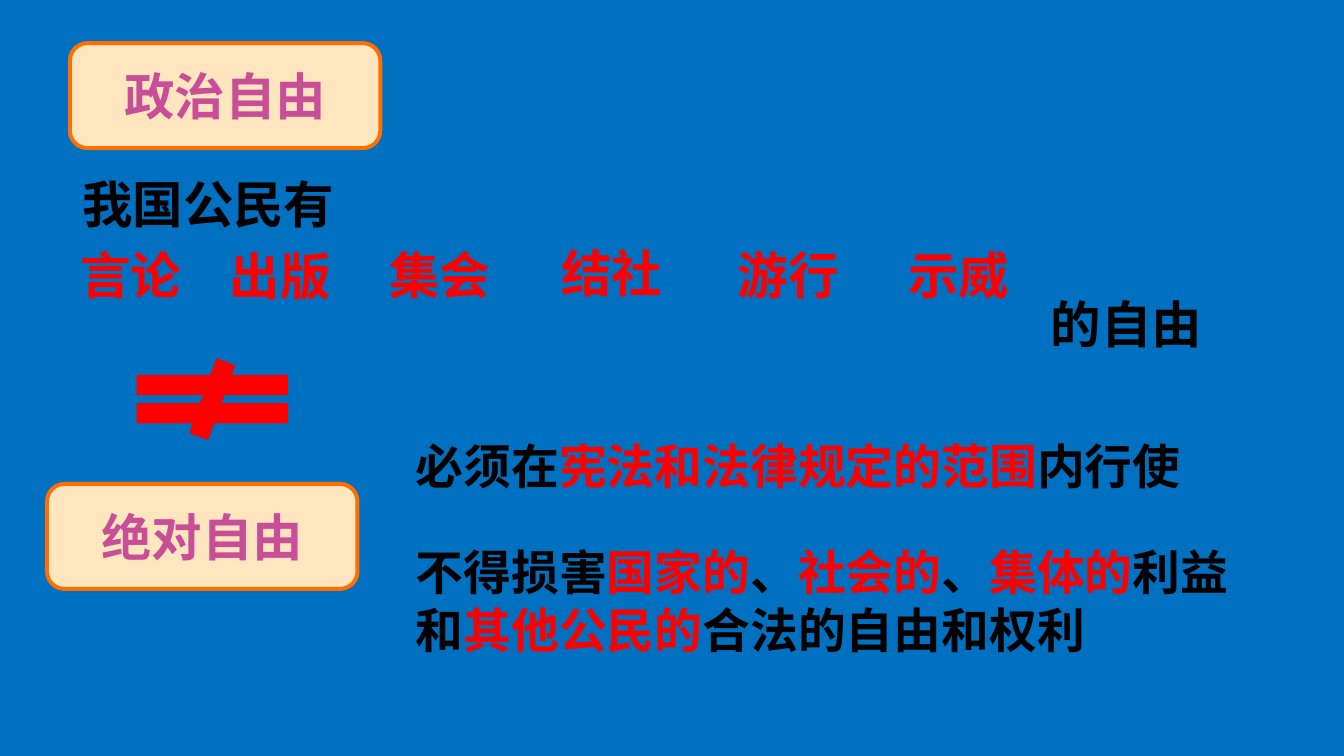
"""Build the slide that sets political freedom against absolute freedom."""
from dataclasses import dataclass

from lxml.etree import SubElement
from pptx import Presentation
from pptx.dml.color import RGBColor as Rgb
from pptx.enum.shapes import MSO_SHAPE as Shape
from pptx.enum.text import MSO_ANCHOR as Anchor, MSO_AUTO_SIZE as Auto, PP_ALIGN as Align
from pptx.oxml.ns import qn
from pptx.util import Inches, Pt

WIDE, HIGH = Inches(14.06), Inches(7.91)


@dataclass(frozen=True)
class Theme:
    face: str = "Noto Sans CJK SC"
    back: Rgb = Rgb(0x00, 0x70, 0xC0)
    card: Rgb = Rgb(0xFF, 0xE6, 0xBF)
    edge: Rgb = Rgb(0xFF, 0x6E, 0x00)
    head: Rgb = Rgb(0xC8, 0x4E, 0x97)
    ink: Rgb = Rgb(0x00, 0x00, 0x00)
    red: Rgb = Rgb(0xFF, 0x00, 0x00)
    large: Pt = Pt(38)
    small: Pt = Pt(36)


THEME = Theme()
RULES = (
    "必须在|宪法和法律规定的范围|内行使",
    "不得损害|国家的|、|社会的|、|集体的|利益和|其他公民的|合法的自由和权利",
)
WORDS = (
    ("言论", 5.2, 31.7), ("出版", 16.3, 31.8), ("集会", 28.2, 31.6),
    ("结社", 41, 31.35), ("游行", 54.1, 31.7), ("示威", 66.8, 31.7),
)


def area(left, top, width, height):
    """Turn percentages of the slide into lengths."""
    return (int(WIDE * left / 100), int(HIGH * top / 100),
            int(WIDE * width / 100), int(HIGH * height / 100))


def move(item, box):
    """Put a shape into an area."""
    item.left, item.top, item.width, item.height = box


def style(para, size, color):
    """Set the font of a paragraph for Latin and Chinese text."""
    font = para.font
    font.name, font.size, font.bold = THEME.face, size, True
    font.color.rgb = color
    mark = para._p.pPr.find(qn("a:defRPr"))
    SubElement(mark, qn("a:ea"), typeface=THEME.face)


def frame(item, anchor, side, edge):
    """Set wrapping, anchor and margins of a text frame."""
    text = item.text_frame
    text.word_wrap, text.auto_size = True, Auto.NONE
    text.vertical_anchor = anchor
    text.margin_left = text.margin_right = Inches(side)
    text.margin_top = text.margin_bottom = Inches(edge)
    return text


def label(slide, words, box, color):
    """Add a line of large text."""
    text = frame(slide.shapes.add_textbox(*box), Anchor.TOP, 0.11, 0.05)
    text.text = words
    style(text.paragraphs[0], THEME.large, color)


def solid(slide, kind, box, fill, line, width):
    """Add a filled and outlined preset shape."""
    item = slide.shapes.add_shape(kind, *box)
    item.shadow.inherit = False
    item.fill.solid()
    item.fill.fore_color.rgb = fill
    item.line.color.rgb = line
    item.line.width = Pt(width)
    return item


def card(slide, box):
    """Add a rounded card."""
    return solid(slide, Shape.ROUNDED_RECTANGLE, box, THEME.card, THEME.edge, 3)


def head(item, words):
    """Write a centred heading into a shape."""
    text = frame(item, Anchor.MIDDLE, 0.11, 0.05)
    text.text = words
    para = text.paragraphs[0]
    para.alignment = Align.CENTER
    style(para, THEME.large, THEME.head)


def title(slide, words, box):
    """Lay the title over a card."""
    item = slide.shapes.title
    move(item, box)
    head(item, words)
    card(slide, box).element.addnext(item.element)


def rules(slide, lines, box):
    """Fill the body with rules whose every second part is red."""
    item = slide.placeholders[1]
    move(item, box)
    text = frame(item, Anchor.MIDDLE, 0.04, 0.04)
    for row, line in enumerate(lines):
        para = text.add_paragraph() if row else text.paragraphs[0]
        para.space_before = Pt(37 * row)
        props = para._p.get_or_add_pPr()
        props.set("marL", "0")
        props.set("indent", "0")
        SubElement(props, qn("a:buNone"))
        style(para, THEME.small, THEME.ink)
        for turn, part in enumerate(line.split("|")):
            run = para.add_run()
            run.text = part
            if turn % 2:
                run.font.color.rgb = THEME.red


def main():
    """Build and save the slide."""
    deck = Presentation()
    deck.slide_width, deck.slide_height = WIDE, HIGH
    slide = deck.slides.add_slide(deck.slide_layouts[1])
    slide.background.fill.solid()
    slide.background.fill.fore_color.rgb = THEME.back

    title(slide, "政治自由", area(5.2, 5.7, 23.1, 13.9))
    label(slide, "我国公民有", area(5.33, 22.25, 85.3, 9.4), THEME.ink)
    for word, left, top in WORDS:
        label(slide, word, area(left, top, 11, 9.4), THEME.red)
    label(slide, "的自由", area(77.4, 38.2, 19.4, 9.4), THEME.ink)

    solid(slide, Shape.MATH_NOT_EQUAL, area(8.2, 47.5, 15.2, 10.6),
          THEME.red, THEME.red, 1)
    head(card(slide, area(3.5, 64, 23.1, 13.9)), "绝对自由")
    rules(slide, RULES, area(30.65, 57.3, 61.45, 30.2))
    deck.save("out.pptx")


if __name__ == "__main__":
    main()
